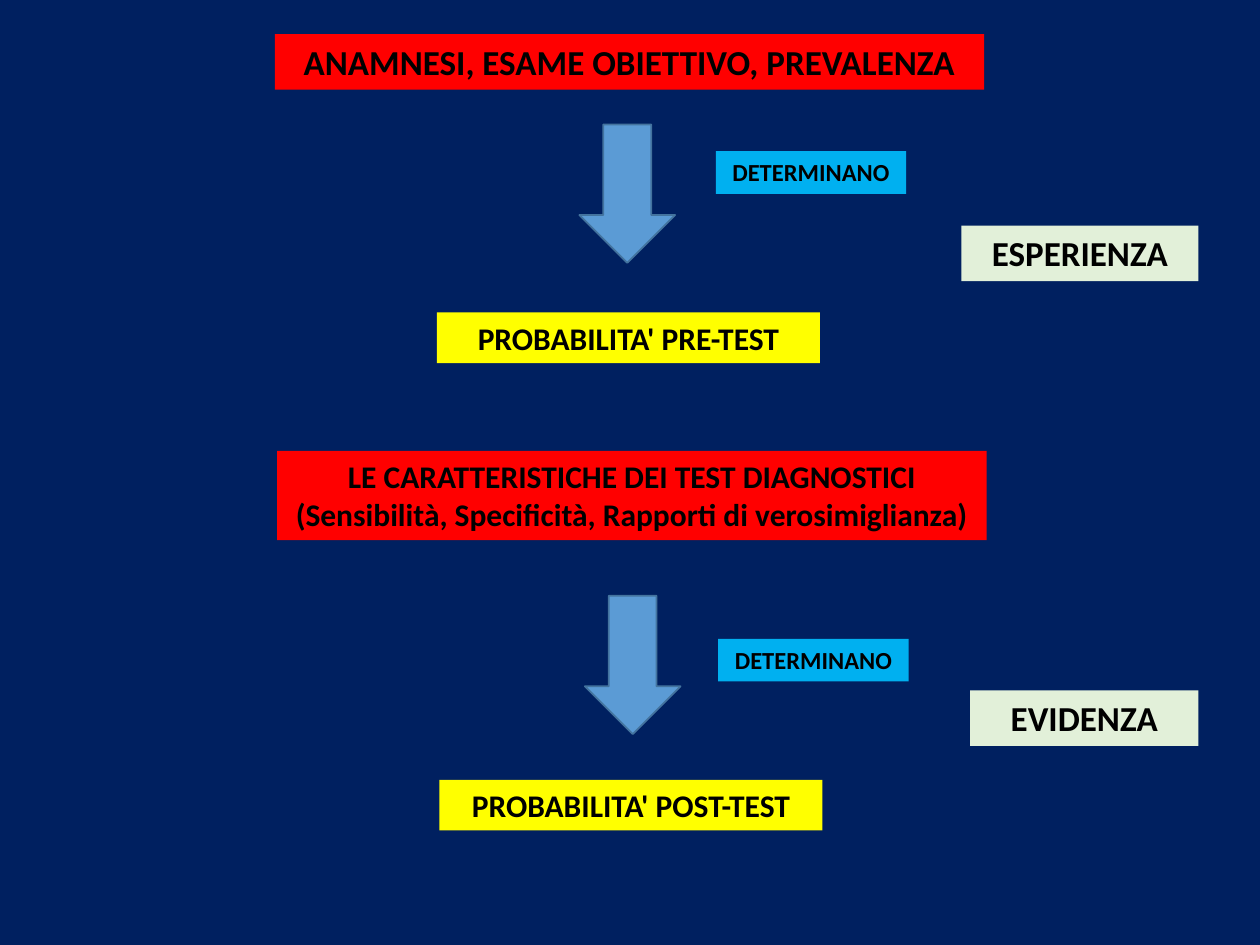
"""Build the slide on how pre-test and post-test probability are determined."""

from dataclasses import dataclass

from pptx import Presentation
from pptx.dml.color import RGBColor
from pptx.enum import shapes, text
from pptx.slide import Slide
from pptx.util import Cm, Pt


@dataclass(frozen=True)
class Theme:
    """Colours, font and type sizes of the slide."""

    background: RGBColor = RGBColor(0x00, 0x20, 0x60)
    source: RGBColor = RGBColor(0xFF, 0x00, 0x00)
    verb: RGBColor = RGBColor(0x00, 0xB0, 0xF0)
    result: RGBColor = RGBColor(0xFF, 0xFF, 0x00)
    basis: RGBColor = RGBColor(0xE2, 0xF0, 0xD9)
    arrow: RGBColor = RGBColor(0x5B, 0x9B, 0xD5)
    arrow_line: RGBColor = RGBColor(0x43, 0x73, 0x9E)
    ink: RGBColor = RGBColor(0x00, 0x00, 0x00)
    font: str = "Calibri"
    large: int = 20
    medium: int = 18
    small: int = 14


@dataclass(frozen=True)
class Box:
    """A filled label, with its place and size in centimetres."""

    left: float
    top: float
    width: float
    height: float
    fill: RGBColor
    size: int
    lines: tuple[str, ...]


@dataclass(frozen=True)
class Arrow:
    """A block arrow pointing down, placed in centimetres."""

    left: float
    top: float
    width: float = 1.93
    height: float = 2.79


THEME = Theme()


def verb_box(left: float, top: float) -> Box:
    """Return the label beside an arrow."""
    return Box(left, top, 3.84, 0.86, THEME.verb, THEME.small, ("DETERMINANO",))


def result_box(left: float, top: float, label: str) -> Box:
    """Return the probability an arrow leads to."""
    return Box(left, top, 7.72, 1.02, THEME.result, THEME.medium, (label,))


def basis_box(left: float, top: float, label: str) -> Box:
    """Return a label that ends at the right margin."""
    return Box(left, top, 24.16 - left, 1.12, THEME.basis, THEME.large, (label,))


BOXES = (
    Box(5.54, 0.69, 14.3, 1.12, THEME.source, THEME.large,
        ("ANAMNESI, ESAME OBIETTIVO, PREVALENZA",)),
    verb_box(14.43, 3.05),
    result_box(8.81, 6.3, "PROBABILITA' PRE-TEST"),
    Box(5.59, 9.09, 14.3, 1.8, THEME.source, THEME.medium,
        ("LE CARATTERISTICHE DEI TEST DIAGNOSTICI",
         "(Sensibilità, Specificità, Rapporti di verosimiglianza)")),
    verb_box(14.48, 12.88),
    result_box(8.86, 15.72, "PROBABILITA' POST-TEST"),
    basis_box(19.38, 4.55, "ESPERIENZA"),
    basis_box(19.56, 13.92, "EVIDENZA"),
)
ARROWS = (Arrow(11.68, 2.51), Arrow(11.79, 12.01))


def draw_box(slide: Slide, box: Box) -> None:
    """Draw a label with one centred paragraph per line."""
    shape = slide.shapes.add_textbox(
        Cm(box.left), Cm(box.top), Cm(box.width), Cm(box.height))
    shape.fill.solid()
    shape.fill.fore_color.rgb = box.fill
    frame = shape.text_frame
    frame.word_wrap = True
    frame.auto_size = text.MSO_AUTO_SIZE.SHAPE_TO_FIT_TEXT
    for index, line in enumerate(box.lines):
        paragraph = frame.add_paragraph() if index else frame.paragraphs[0]
        paragraph.alignment = text.PP_ALIGN.CENTER
        run = paragraph.add_run()
        run.text = line
        run.font.name = THEME.font
        run.font.size = Pt(box.size)
        run.font.bold = True
        run.font.color.rgb = THEME.ink


def draw_arrow(slide: Slide, arrow: Arrow) -> None:
    """Draw an outlined down arrow."""
    shape = slide.shapes.add_shape(
        shapes.MSO_SHAPE.DOWN_ARROW,
        Cm(arrow.left), Cm(arrow.top), Cm(arrow.width), Cm(arrow.height))
    shape.shadow.inherit = False
    shape.fill.solid()
    shape.fill.fore_color.rgb = THEME.arrow
    shape.line.color.rgb = THEME.arrow_line
    shape.line.width = Pt(1)


def main() -> None:
    """Build and save the presentation."""
    presentation = Presentation()
    presentation.slide_width = Cm(25.4)
    presentation.slide_height = Cm(19.05)
    slide = presentation.slides.add_slide(presentation.slide_layouts[6])
    slide.background.fill.solid()
    slide.background.fill.fore_color.rgb = THEME.background
    for box in BOXES:
        draw_box(slide, box)
    for arrow in ARROWS:
        draw_arrow(slide, arrow)
    presentation.save("out.pptx")


if __name__ == "__main__":
    main()
